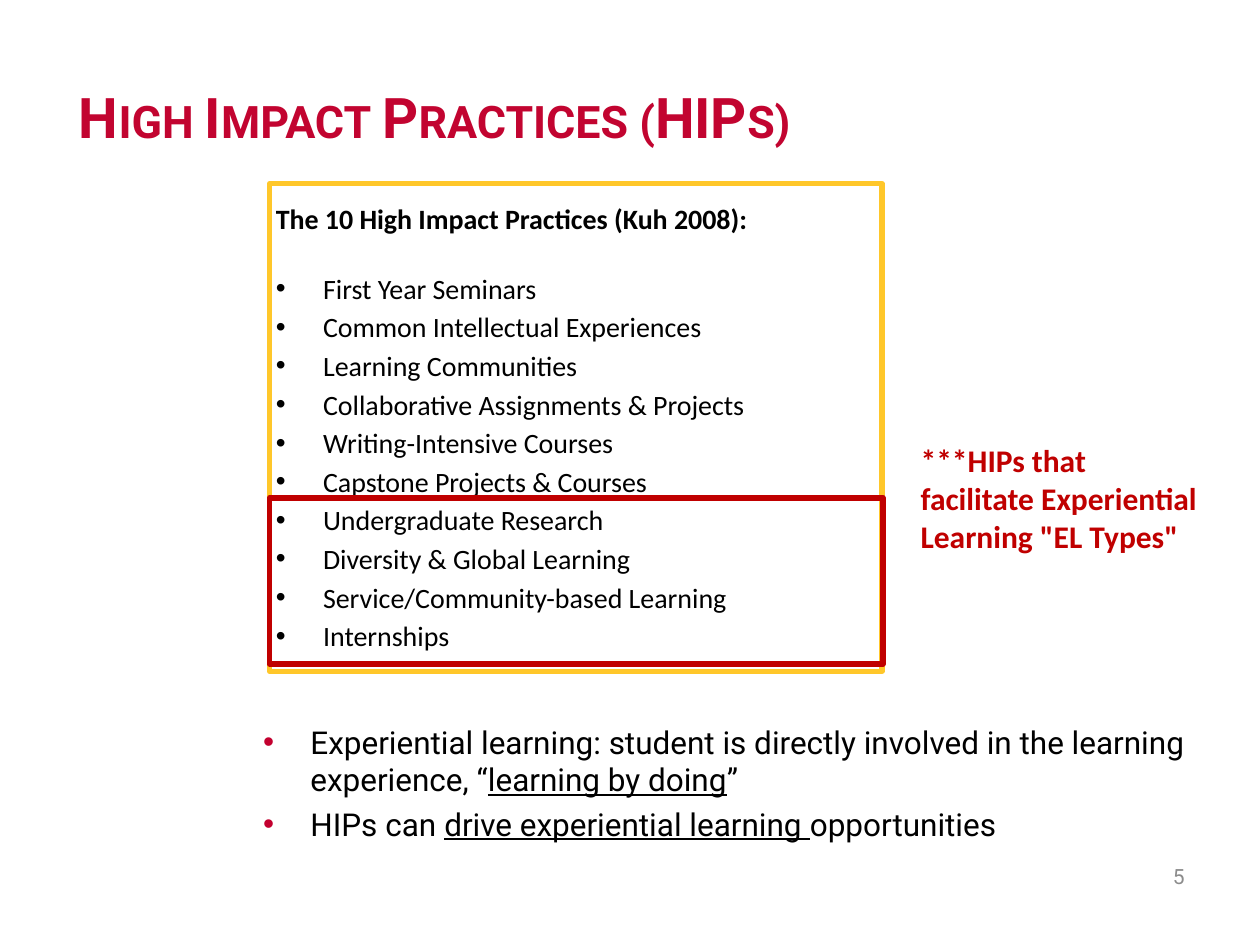
from lxml.etree import SubElement
from pptx import Presentation
from pptx.dml.color import RGBColor
from pptx.enum.shapes import MSO_SHAPE
from pptx.enum.text import MSO_ANCHOR, PP_ALIGN
from pptx.oxml.ns import qn
from pptx.util import Pt

BLACK = "000000"
CRIMSON = "C20430"
BULLET_RED = "C3002F"
GOLD = "FFC72A"
DARK_RED = "C00000"
GRAY = "8C8C8C"

PRACTICES = [
    "First Year Seminars",
    "Common Intellectual Experiences",
    "Learning Communities",
    "Collaborative Assignments & Projects",
    "Writing-Intensive Courses",
    "Capstone Projects & Courses",
    "Undergraduate Research",
    "Diversity & Global Learning",
    "Service/Community-based Learning",
    "Internships",
]

# Underscores enclose underlined words
TAKEAWAYS = [
    "Experiential learning: student is directly involved in the learning "
    "experience, “_learning by doing_”",
    "HIPs can _drive experiential learning _opportunities",
]


def color(value):
    return RGBColor.from_string(value)


def add_bullet(paragraph, bullet_color, indent=27):
    properties = paragraph._p.get_or_add_pPr()
    properties.set("marL", str(Pt(indent)))
    properties.set("indent", str(-Pt(indent)))
    fill = SubElement(properties, qn("a:buClr"))
    SubElement(fill, qn("a:srgbClr"), val=bullet_color)
    SubElement(properties, qn("a:buFont"), typeface="Arial")
    SubElement(properties, qn("a:buChar"), char="•")


def write_text(frame, text, size=18, font="Roboto", text_color=BLACK, bold=False,
               small_caps=False, align=PP_ALIGN.LEFT, bullet=None,
               line_spacing=None, before=0, after=0):
    """Add one paragraph, filling the frame's first paragraph if it is empty."""
    first = frame.paragraphs[0]
    paragraph = frame.add_paragraph() if first.runs else first
    if bullet:
        add_bullet(paragraph, bullet)
    paragraph.alignment = align
    paragraph.space_before = Pt(before)
    paragraph.space_after = Pt(after)
    if line_spacing:
        paragraph.line_spacing = line_spacing
    for index, part in enumerate(text.split("_")):
        run = paragraph.add_run()
        run.text = part
        run.font.size = Pt(size)
        run.font.name = font
        run.font.bold = bold
        run.font.underline = index % 2 == 1
        run.font.color.rgb = color(text_color)
        if small_caps:
            run._r.get_or_add_rPr().set("cap", "small")


class SlideBuilder:
    def __init__(self, slide):
        self.slide = slide

    def text_box(self, left, top, width, height, anchor=MSO_ANCHOR.TOP):
        shape = self.slide.shapes.add_textbox(Pt(left), Pt(top), Pt(width), Pt(height))
        shape.text_frame.word_wrap = True
        shape.text_frame.vertical_anchor = anchor
        return shape.text_frame

    def frame(self, left, top, width, height, line_color, line_width):
        shape = self.slide.shapes.add_shape(
            MSO_SHAPE.RECTANGLE, Pt(left), Pt(top), Pt(width), Pt(height))
        shape.shadow.inherit = False
        shape.fill.background()
        shape.line.color.rgb = color(line_color)
        shape.line.width = Pt(line_width)
        text_frame = shape.text_frame
        text_frame.word_wrap = True
        text_frame.vertical_anchor = MSO_ANCHOR.TOP
        text_frame.margin_left, text_frame.margin_top = Pt(3.6), Pt(7.2)
        text_frame.margin_right = text_frame.margin_bottom = 0
        return text_frame


def main():
    presentation = Presentation()
    presentation.slide_width, presentation.slide_height = Pt(720), Pt(540)
    slide = presentation.slides.add_slide(presentation.slide_layouts[6])
    builder = SlideBuilder(slide)

    # Title
    title = builder.text_box(38, 21.6, 558, 90, MSO_ANCHOR.MIDDLE)
    write_text(title, "High Impact Practices (HIPs)", size=32, text_color=CRIMSON,
               bold=True, small_caps=True)

    # Takeaways
    takeaways = builder.text_box(143.3, 409.4, 576.7, 80)
    for index, text in enumerate(TAKEAWAYS):
        write_text(takeaways, text, bullet=BULLET_RED, before=3.6 if index else 0)

    # Slide number
    number = builder.text_box(624, 486, 60, 28.8, MSO_ANCHOR.MIDDLE)
    write_text(number, "5", size=12, text_color=GRAY, align=PP_ALIGN.RIGHT)

    # List of practices
    practices = builder.frame(154, 105, 350, 278.6, GOLD, 3)
    list_style = dict(size=16, font="Calibri", line_spacing=1.15)
    write_text(practices, "The 10 High Impact Practices (Kuh 2008):", bold=True,
               after=18, **list_style)
    for practice in PRACTICES:
        write_text(practices, practice, bullet=BLACK, **list_style)

    # Experiential learning highlight and its label
    builder.frame(154, 284.4, 350.5, 95, DARK_RED, 3.25)
    label = builder.text_box(519, 248.4, 172.8, 72.7)
    write_text(label, '***HIPs that facilitate Experiential Learning "EL Types"',
               font="Calibri", text_color=DARK_RED, bold=True)

    presentation.save("out.pptx")


if __name__ == "__main__":
    main()
